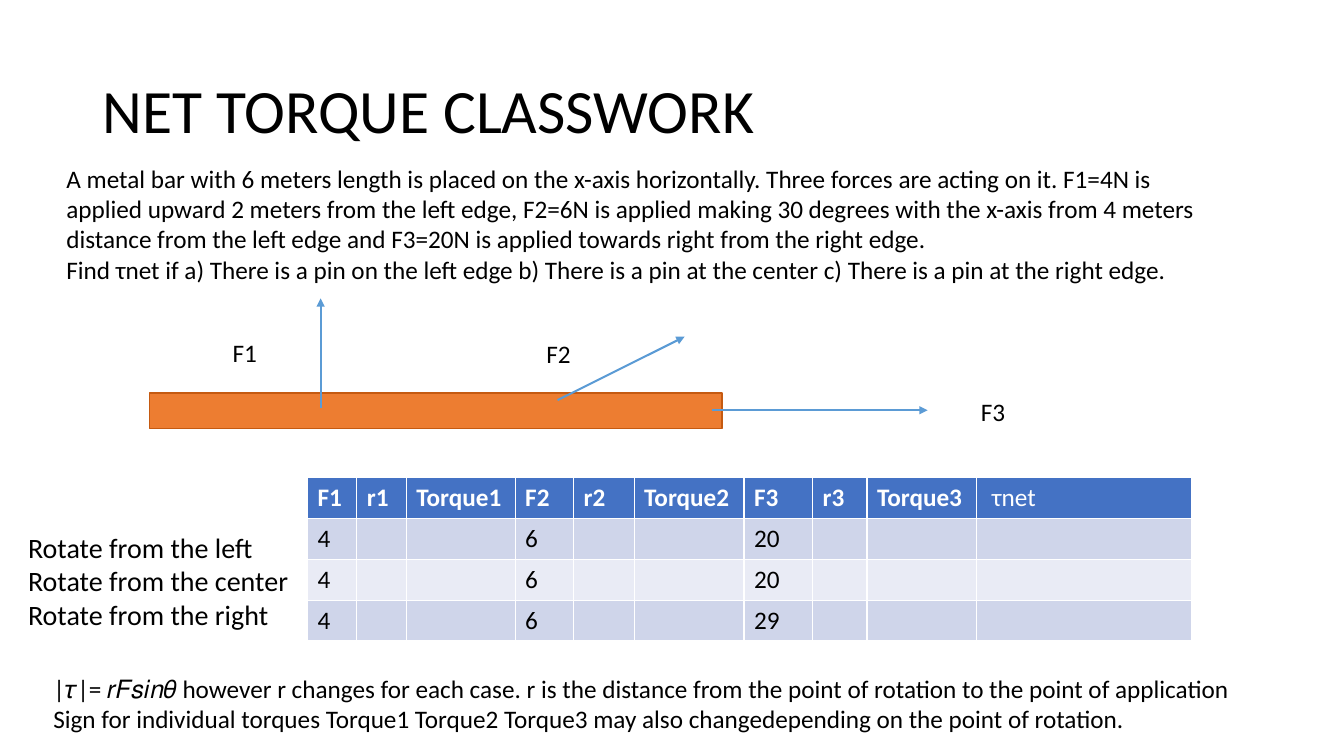
from lxml import etree
from pptx import Presentation
from pptx import util as u
from pptx.dml.color import RGBColor
from pptx.enum import shapes, text
from pptx.oxml.ns import qn

COLORS = {
    "ink": "000000", "white": "FFFFFF", "bar": "ED7D31", "bar_edge": "C55A11",
    "force": "5B9BD5", "header": "4472C4", "odd": "CFD5EA", "even": "E9EBF5",
}
PROBLEM = [
    "A metal bar with 6 meters length is placed on the x-axis horizontally. "
    "Three forces are acting on it. F1=4N is applied upward 2 meters from the left edge, "
    "F2=6N is applied making 30 degrees with the x-axis from 4 meters distance "
    "from the left edge and F3=20N is applied towards right from the right edge.",
    "Find τnet if a) There is a pin on the left edge b) There is a pin at the center "
    "c) There is a pin at the right edge.",
]
PIVOTS = [f"Rotate from the {pivot}" for pivot in ("left", "center", "right")]
HINTS = [
    "|𝜏|= 𝑟𝐹𝑠𝑖𝑛𝜃 however r changes for each case. "
    "r is the distance from the point of rotation to the point of application",
    "Sign for individual torques Torque1 Torque2 Torque3 may also "
    "changedepending on the point of rotation.",
]
HEADINGS = [f"{name}{n}" for n in (1, 2, 3) for name in ("F", "r", "Torque")] + ["τnet"]
FORCES = [(4, 6, 20), (4, 6, 20), (4, 6, 29)]
COLUMN_WIDTHS = [4.9, 4.9, 10.8, 5.8, 6, 10.9, 6.8, 5.4, 10.9, 21.3]


class Board:
    """Draws styled elements on a slide, measured in grid cells of a tenth of an inch."""

    font = "Calibri"
    cell = u.Inches(0.1)

    def __init__(self, deck):
        self.page = deck.slides.add_slide(deck.slide_layouts[6])

    def grid(self, *lengths):
        return [round(length * self.cell) for length in lengths]

    def color(self, name):
        return RGBColor.from_string(COLORS[name])

    def span(self, para, words, size=18, color="ink", bold=False):
        span = para.add_run()
        span.text = words
        span.font.name = self.font
        span.font.size = u.Pt(size)
        span.font.bold = bold
        span.font.color.rgb = self.color(color)

    def text(self, place, lines, size=18, anchor=text.MSO_ANCHOR.TOP, spacing=1.0):
        frame = self.page.shapes.add_textbox(*self.grid(*place)).text_frame
        frame.word_wrap = True
        frame.vertical_anchor = anchor
        for index, line in enumerate(lines):
            para = frame.add_paragraph() if index else frame.paragraphs[0]
            para.line_spacing = spacing
            self.span(para, line, size)

    def bar(self, place):
        box = self.page.shapes.add_shape(shapes.MSO_SHAPE.RECTANGLE, *self.grid(*place))
        box.shadow.inherit = False
        box.fill.solid()
        box.fill.fore_color.rgb = self.color("bar")
        box.line.color.rgb = self.color("bar_edge")
        box.line.width = u.Pt(1)

    def arrow(self, start, end):
        arrow = self.page.shapes.add_connector(
            shapes.MSO_CONNECTOR.STRAIGHT, *self.grid(*start, *end))
        arrow.line.color.rgb = self.color("force")
        arrow.line.width = u.Pt(1.5)
        properties = arrow._element.spPr
        etree.SubElement(properties.find(qn("a:ln")), qn("a:tailEnd"), type="triangle")
        etree.SubElement(properties, qn("a:effectLst"))

    def table(self, place, widths, rows):
        table = self.page.shapes.add_table(
            len(rows), len(widths), *self.grid(*place)).table
        for column, width in zip(table.columns, self.grid(*widths)):
            column.width = width
        for r, row in enumerate(rows):
            fill = "header" if r == 0 else "odd" if r % 2 else "even"
            for c, words in enumerate(row):
                cell = table.cell(r, c)
                cell.fill.solid()
                cell.fill.fore_color.rgb = self.color(fill)
                if words:
                    last = c == len(row) - 1
                    self.span(cell.text_frame.paragraphs[0], words,
                              color="ink" if r else "white", bold=r == 0 and not last)
                    if last:
                        cell.margin_left = u.Inches(0.15)


def main():
    deck = Presentation()
    deck.slide_width, deck.slide_height = u.Inches(13.33), u.Inches(7.5)
    board = Board(deck)

    board.text((9.2, 4, 115, 14.5), ["NET TORQUE CLASSWORK"], 44,
               text.MSO_ANCHOR.MIDDLE, 0.9)
    board.text((5.6, 15.7, 114.1, 13.1), PROBLEM)

    rows = [HEADINGS]
    for forces in FORCES:
        rows.append([item for force in forces for item in (str(force), "", "")] + [""])
    board.table((30.5, 47.4, sum(COLUMN_WIDTHS), 16.2), COLUMN_WIDTHS, rows)

    board.bar((14.8, 39, 56.8, 3.5))
    for start, end in (((55.3, 39.7), (67.9, 33.4)),
                       ((31.8, 40.5), (31.8, 29.6)),
                       ((70.6, 40.7), (92, 40.7))):
        board.arrow(start, end)
    for number, (left, top) in enumerate(((22.1, 33), (53.2, 33.1), (96.3, 38.8)), 1):
        board.text((left, top, 8, 4), [f"F{number}"])

    board.text((1.8, 52.1, 30, 11.1), PIVOTS, 20)
    board.text((4.3, 66.3, 121.8, 7.1), HINTS)
    deck.save("out.pptx")


if __name__ == "__main__":
    main()
